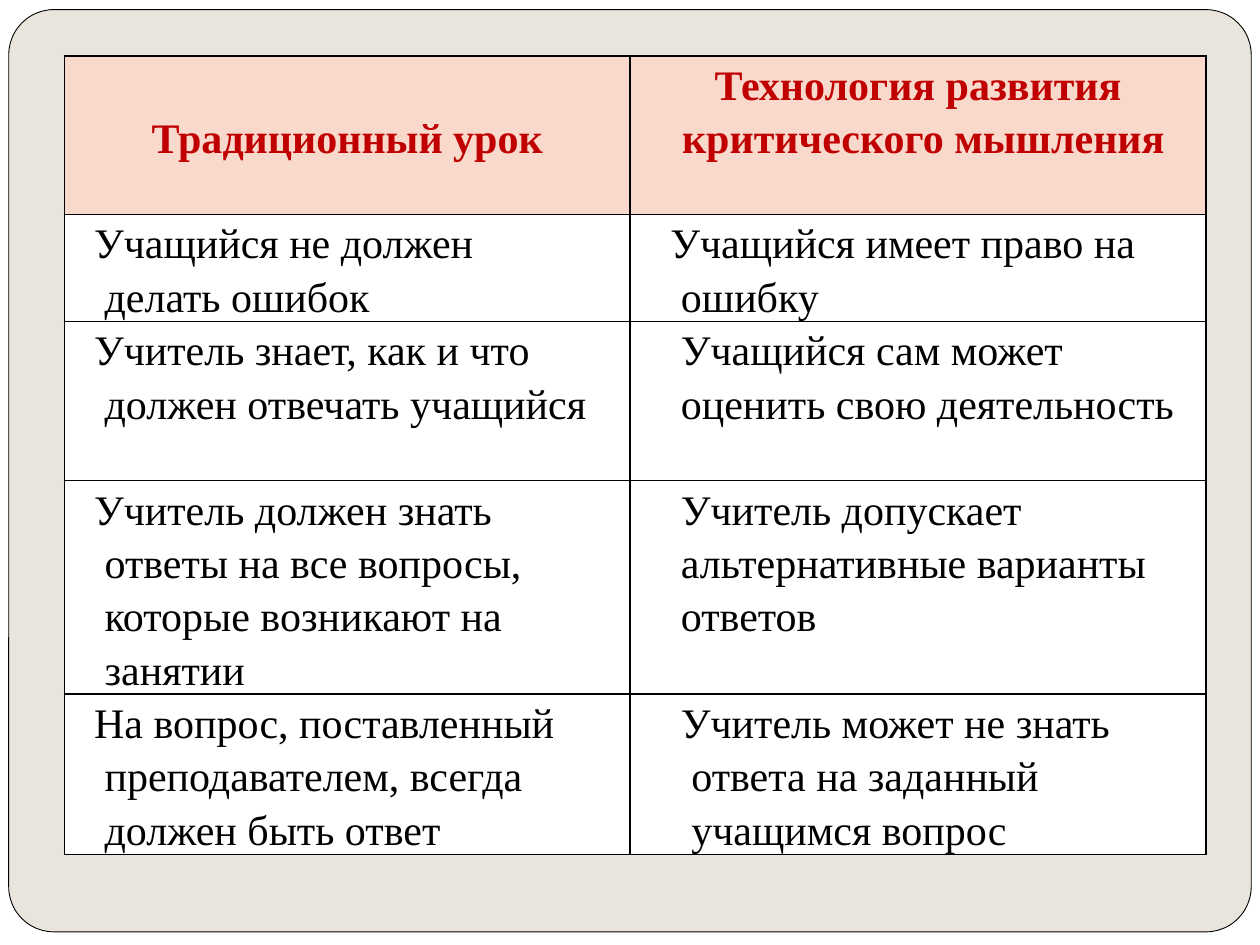
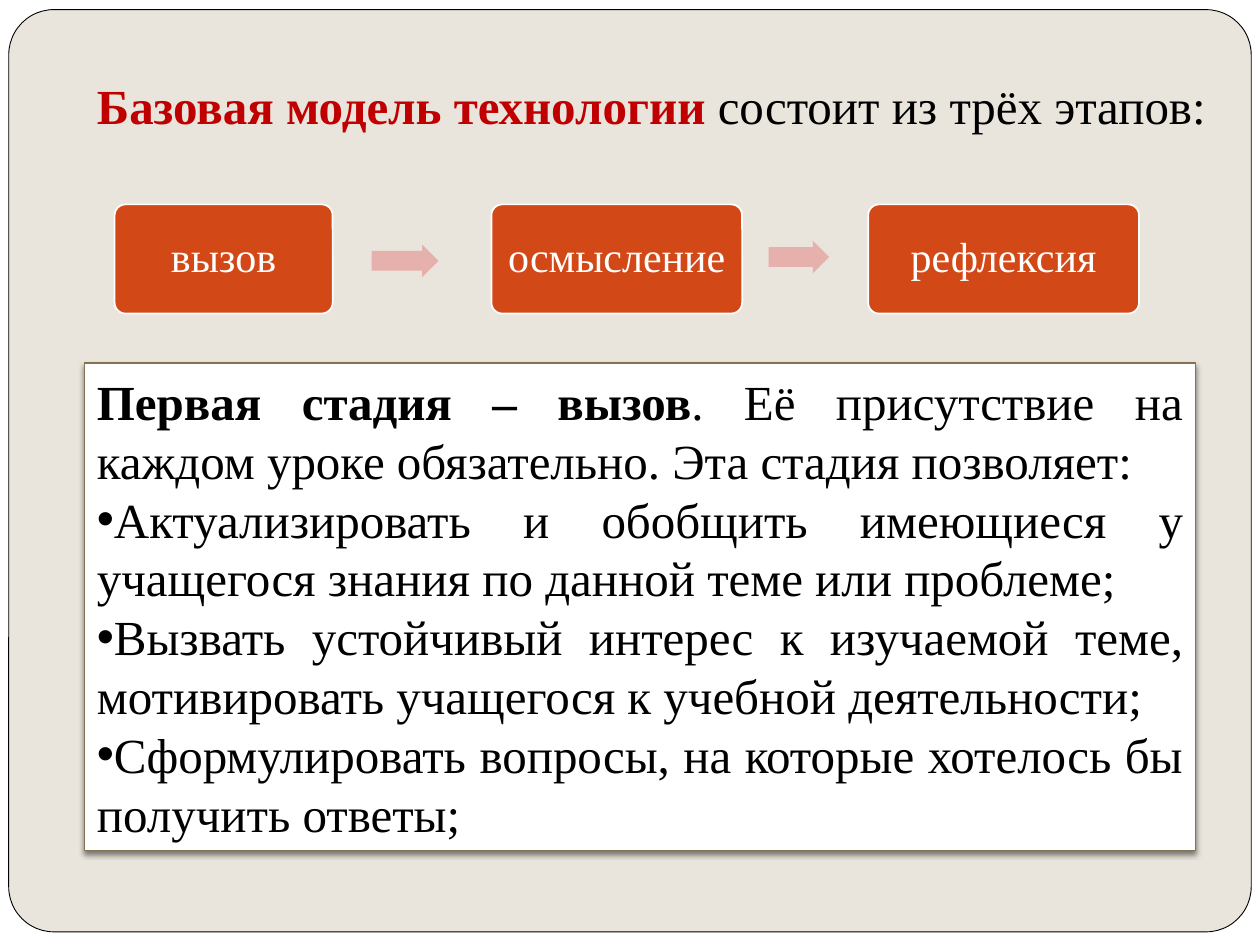
from lxml.etree import SubElement
from pptx import Presentation
from pptx.dml.color import RGBColor
from pptx.enum.shapes import MSO_SHAPE as Preset
from pptx.enum.text import MSO_ANCHOR as Anchor, MSO_AUTO_SIZE as AutoSize, PP_ALIGN as Align
from pptx.oxml import parse_xml
from pptx.oxml.ns import nsdecls, qn
from pptx.util import Pt

BLACK = RGBColor(0x00, 0x00, 0x00)
WHITE = RGBColor(0xFF, 0xFF, 0xFF)
SAND = RGBColor(0xE9, 0xE5, 0xDC)
RED = RGBColor(0xC0, 0x00, 0x00)
PEACH = RGBColor(0xFA, 0xD9, 0xCD)
ORANGE = RGBColor(0xD3, 0x48, 0x17)
PINK = RGBColor(0xE6, 0xB1, 0xAC)
BROWN = RGBColor(0x84, 0x72, 0x53)

FONT = "Times New Roman"
CONTENT_LAYOUT, BLANK_LAYOUT = 1, 6

HEADINGS = (["Традиционный урок"],
            ["Технология развития", "критического мышления"])
# Each cell: indent of the first line, indent of the other lines, lines.
COMPARISON = [
    ((12, 18, ["Учащийся не должен", "делать ошибок"]),
     (18, 24, ["Учащийся имеет право на", "ошибку"])),
    ((12, 18, ["Учитель знает, как и что", "должен отвечать учащийся"]),
     (24, 24, ["Учащийся сам может", "оценить свою деятельность"])),
    ((12, 18, ["Учитель должен знать", "ответы на все вопросы,",
               "которые возникают на", "занятии"]),
     (24, 24, ["Учитель допускает", "альтернативные варианты", "ответов"])),
    ((12, 18, ["На вопрос, поставленный", "преподавателем, всегда",
               "должен быть ответ"]),
     (24, 30, ["Учитель может не знать", "ответа на заданный",
               "учащимся вопрос"])),
]
COLUMN_WIDTHS = (323.3, 329)
ROW_HEIGHTS = (90.5, 61.2, 91, 122, 91.5)

STAGES = (("вызов", 124.6), ("осмысление", 143.3), ("рефлексия", 154.8))
STAGE_LEFT, STAGE_PITCH = 65.5, 215.3
ARROWS = ((212.4, 139.7, 38.2, 18.7), (439.2, 137.5, 34.6, 18.7))

STAGE_LEAD = [("Первая стадия – вызов", BLACK, True),
              (". Её присутствие на каждом уроке обязательно. "
               "Эта стадия позволяет:", BLACK, False)]
STAGE_GOALS = [
    "Актуализировать и обобщить имеющиеся у учащегося знания по данной теме или проблеме;",
    "Вызвать устойчивый интерес к изучаемой теме, мотивировать учащегося к учебной деятельности;",
    "Сформулировать вопросы, на которые хотелось бы получить ответы;",
]


class SlideMaker:
    """Holds the deck, its style and the slide being filled."""

    def __init__(self):
        self.deck = Presentation()
        self.deck.slide_width, self.deck.slide_height = Pt(720), Pt(540)
        self.page = None

    def new_page(self, layout):
        self.page = self.deck.slides.add_slide(self.deck.slide_layouts[layout])

    def place(self, box, left, top, width, height):
        box.left, box.top, box.width, box.height = map(Pt, (left, top, width, height))

    def paint(self, box, fill, line=None, line_width=1):
        box.shadow.inherit = False
        box.fill.solid()
        box.fill.fore_color.rgb = fill
        if line is None:
            box.line.fill.background()
        else:
            box.line.color.rgb = line
            box.line.width = Pt(line_width)

    def shape(self, preset, area, fill, line=None, line_width=1, adjustments=()):
        box = self.page.shapes.add_shape(preset, *map(Pt, area))
        self.paint(box, fill, line, line_width)
        for index, value in enumerate(adjustments):
            box.adjustments[index] = value
        return box

    def master_frame(self):
        """Draw the rounded frame on the current slide and move it to the master."""
        master = self.deck.slide_master
        master.background.fill.solid()
        master.background.fill.fore_color.rgb = SAND
        backdrop = self.shape(Preset.RECTANGLE, (0, 0, 720, 540), WHITE)
        frame = self.shape(Preset.ROUNDED_RECTANGLE, (5, 5.5, 710, 527), SAND,
                           BLACK, 0.5, [0.049])
        for index, box in enumerate((backdrop, frame), start=2):
            master.shapes.element.insert(index, box.element)

    def add_spans(self, para, spans, size, align):
        """Fill a paragraph with (text, colour, bold) spans."""
        para.alignment = align
        for text, color, bold in spans:
            span = para.add_run()
            span.text = text
            span.font.name, span.font.size = FONT, Pt(size)
            span.font.bold, span.font.color.rgb = bold, color

    def indent(self, para, left):
        properties = para._p.get_or_add_pPr()
        properties.set("marL", str(Pt(left)))
        properties.set("indent", "0")
        return properties

    def title(self, spans):
        box = self.page.shapes.title
        self.place(box, 48.2, 40, 655.2, 40)
        frame = box.text_frame
        frame.auto_size, frame.word_wrap = AutoSize.NONE, True
        frame.vertical_anchor = Anchor.MIDDLE
        self.add_spans(frame.paragraphs[0], spans, 28, Align.LEFT)

    def stage(self, text, left, width):
        box = self.shape(Preset.ROUNDED_RECTANGLE, (left, 116.8, width, 62.4),
                         ORANGE, WHITE, 1, [0.1])
        box.text_frame.word_wrap = True
        box.text_frame.vertical_anchor = Anchor.MIDDLE
        para = box.text_frame.paragraphs[0]
        para.line_spacing = 0.9
        self.add_spans(para, [(text, WHITE, False)], 24, Align.CENTER)

    def arrow(self, area):
        self.shape(Preset.RIGHT_ARROW, area, PINK, adjustments=(0.6, 0.5))

    def panel(self, lead, bullets):
        """Turn the body placeholder into a white card with a lead and a list."""
        box = self.page.placeholders[1]
        self.place(box, 48.2, 207.4, 635, 278.6)
        self.paint(box, WHITE, BROWN, 0.75)
        box.element.spPr.find(qn("a:effectLst")).append(parse_xml(
            f'<a:outerShdw {nsdecls("a")} blurRad="{Pt(3)}" dist="{Pt(2)}" '
            'dir="5400000" rotWithShape="0"><a:srgbClr val="000000">'
            '<a:alpha val="50000"/></a:srgbClr></a:outerShdw>'))
        frame = box.text_frame
        frame.auto_size, frame.word_wrap = AutoSize.NONE, True
        frame.vertical_anchor = Anchor.MIDDLE
        items = [lead] + [[(text, BLACK, False)] for text in bullets]
        for index, spans in enumerate(items):
            para = frame.add_paragraph() if index else frame.paragraphs[0]
            para.space_before, para.line_spacing = Pt(0), Pt(33.6)
            self.add_spans(para, spans, 28, Align.JUSTIFY)
            properties = self.indent(para, 0)
            if index:
                SubElement(properties, qn("a:buChar")).set("char", "•")
            else:
                SubElement(properties, qn("a:buNone"))

    def table(self, left, top, widths, heights):
        grid = self.page.shapes.add_table(
            len(heights), len(widths), Pt(left), Pt(top),
            Pt(sum(widths)), Pt(sum(heights))).table
        grid.first_row = grid.horz_banding = False
        for column, width in zip(grid.columns, widths):
            column.width = Pt(width)
        for row, height in zip(grid.rows, heights):
            row.height = Pt(height)
        return grid

    def cell(self, cell, lines, indents, fill, color=BLACK, bold=False,
             align=Align.JUSTIFY, top=0):
        cell.margin_left = cell.margin_right = Pt(5)
        cell.margin_top, cell.margin_bottom = Pt(top), Pt(0)
        for side in ("lnL", "lnR", "lnT", "lnB"):
            cell._tc.get_or_add_tcPr().append(parse_xml(
                f'<a:{side} {nsdecls("a")} w="{Pt(1)}"><a:solidFill>'
                f'<a:srgbClr val="{BLACK}"/></a:solidFill></a:{side}>'))
        cell.fill.solid()
        cell.fill.fore_color.rgb = fill
        frame = cell.text_frame
        for index, text in enumerate(lines):
            para = frame.add_paragraph() if index else frame.paragraphs[0]
            para.line_spacing = 1.15
            self.add_spans(para, [(text, color, bold)], 24, align)
            self.indent(para, indents[min(index, 1)])


def comparison_page(maker):
    maker.new_page(BLANK_LAYOUT)
    maker.master_frame()
    grid = maker.table(36.8, 32, COLUMN_WIDTHS, ROW_HEIGHTS)
    for column, lines in enumerate(HEADINGS):
        maker.cell(grid.cell(0, column), lines, (0, 6), PEACH, RED, True,
                   Align.CENTER, top=30.5 if len(lines) == 1 else 0)
    for row, entries in enumerate(COMPARISON, start=1):
        for column, (first, rest, lines) in enumerate(entries):
            maker.cell(grid.cell(row, column), lines, (first, rest), WHITE)


def stages_page(maker):
    maker.new_page(CONTENT_LAYOUT)
    maker.title([("Базовая модель технологии ", RED, True),
                 ("состоит из трёх этапов:", BLACK, False)])
    for index, (text, width) in enumerate(STAGES):
        maker.stage(text, STAGE_LEFT + index * STAGE_PITCH, width)
    for area in ARROWS:
        maker.arrow(area)
    maker.panel(STAGE_LEAD, STAGE_GOALS)


def main():
    maker = SlideMaker()
    comparison_page(maker)
    stages_page(maker)
    maker.deck.save("out.pptx")


if __name__ == "__main__":
    main()
